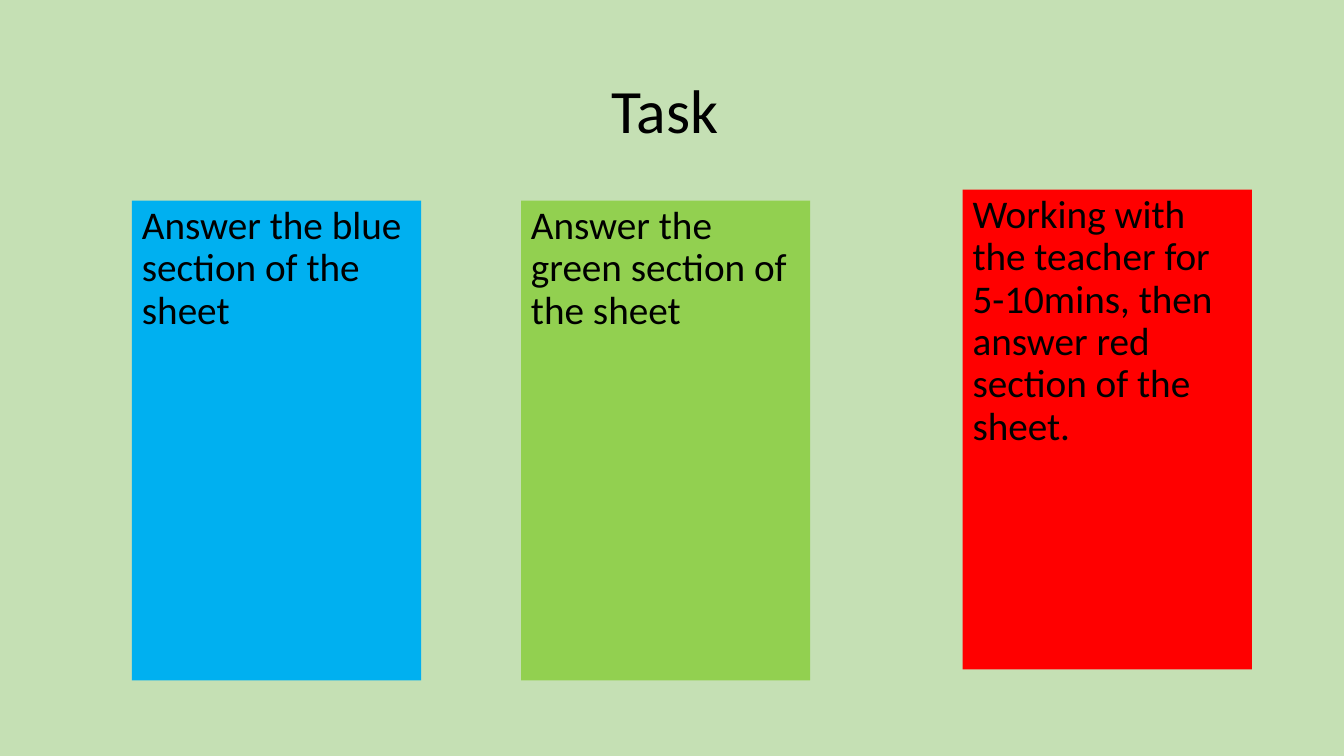
from dataclasses import dataclass

from pptx import Presentation
from pptx.dml.color import RGBColor
from pptx.enum.shapes import MSO_SHAPE as Kind
from pptx.enum.text import MSO_ANCHOR as Anchor, PP_ALIGN as Align
from pptx.shapes.autoshape import Shape
from pptx.slide import Slide
from pptx.util import Pt

PALE = RGBColor(0xC5, 0xE0, 0xB4)
BLUE = RGBColor(0x00, 0xB0, 0xF0)
GREEN = RGBColor(0x92, 0xD0, 0x50)
RED = RGBColor(0xFF, 0x00, 0x00)
BLACK = RGBColor(0x00, 0x00, 0x00)

WIDTH, HEIGHT = 206.6, 342.7


@dataclass
class Card:
    left: float
    top: float
    fill: RGBColor
    text: str


CARDS = [
    Card(94.3, 143.3, BLUE, "Answer the blue section of the sheet"),
    Card(372.2, 143.3, GREEN, "Answer the green section of the sheet"),
    Card(687.6, 135.4, RED,
         "Working with the teacher for 5-10mins, then answer red section of the sheet."),
]


def assign(item: object, values: dict) -> None:
    for name, value in values.items():
        setattr(item, name, value)


def write(shape: Shape, text: str, size: float, anchor: Anchor,
          align: Align, before: float) -> None:
    frame = shape.text_frame
    assign(frame, {"word_wrap": True, "vertical_anchor": anchor})
    para = frame.paragraphs[0]
    assign(para, {"alignment": align, "line_spacing": 0.9,
                  "space_before": Pt(before)})
    run = para.add_run()
    run.text = text
    assign(run.font, {"name": "Calibri", "size": Pt(size)})
    run.font.color.rgb = BLACK


def draw(slide: Slide, card: Card) -> None:
    shape = slide.shapes.add_shape(Kind.RECTANGLE, Pt(card.left), Pt(card.top),
                                   Pt(WIDTH), Pt(HEIGHT))
    shape.shadow.inherit = False
    shape.fill.solid()
    shape.fill.fore_color.rgb = card.fill
    shape.line.fill.background()
    write(shape, card.text, 28, Anchor.TOP, Align.LEFT, 10)


def main() -> None:
    deck = Presentation()
    assign(deck, {"slide_width": Pt(960), "slide_height": Pt(540)})
    slide = deck.slides.add_slide(deck.slide_layouts[6])
    slide.background.fill.solid()
    slide.background.fill.fore_color.rgb = PALE

    title = slide.shapes.add_textbox(Pt(66), Pt(28.75), Pt(828), Pt(104.4))
    write(title, "Task ", 44, Anchor.MIDDLE, Align.CENTER, 0)
    for card in CARDS:
        draw(slide, card)
    deck.save("out.pptx")


if __name__ == "__main__":
    main()
